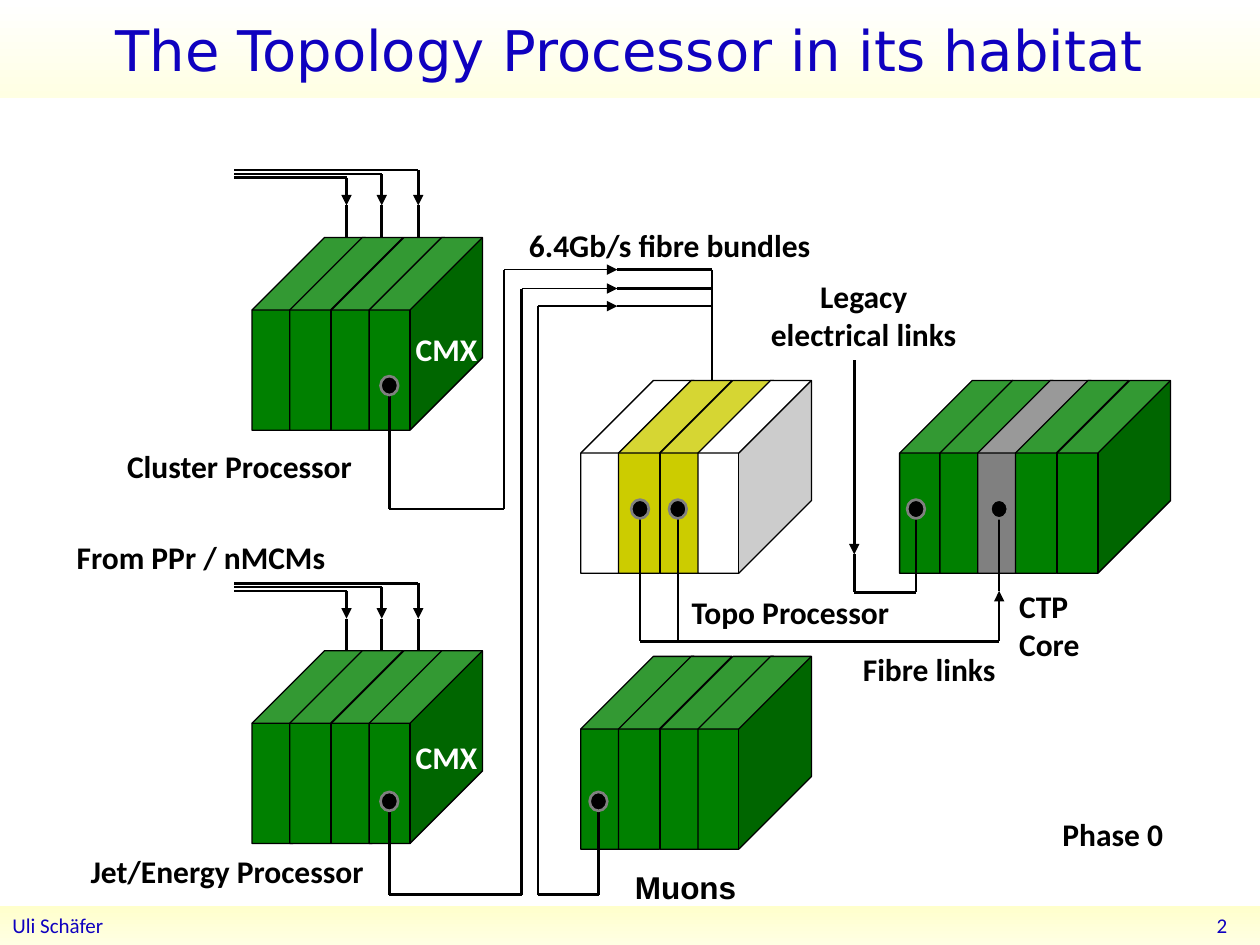
import itertools
from dataclasses import dataclass

import pptx
import pptx.dml.color
import pptx.enum.shapes
import pptx.enum.text
import pptx.oxml
import pptx.oxml.ns
import pptx.util
from lxml import etree

SHAPE = pptx.enum.shapes.MSO_SHAPE
ALIGN = pptx.enum.text.PP_ALIGN
ANCHOR = pptx.enum.text.MSO_ANCHOR
COLUMNS = 100
SLIDE_WIDTH = pptx.util.Inches(10)
SLIDE_HEIGHT = pptx.util.Inches(7.5)


@dataclass(frozen=True)
class Theme:
    ink: str = "000000"
    white: str = "FFFFFF"
    title: str = "0F01BF"
    green: str = "008000"
    yellow: str = "CCCC00"
    grey: str = "808080"
    band_light: str = "FFFFE3"
    band_deep: str = "FFFFCC"
    title_font: str = "DejaVu Sans"
    font: str = "Calibri"
    muon_font: str = "Arial"
    title_size: int = 32
    label_size: int = 18
    footer_size: int = 12
    wire: float = 1.5
    thin: float = 0.75


THEME = Theme()


def grid(*cells):
    return [round(SLIDE_WIDTH * n / COLUMNS) for n in cells]


def rgb(color):
    return pptx.dml.color.RGBColor.from_string(color)


def write(sp, lines, size, color, font=THEME.font, bold=False, align=ALIGN.LEFT,
          anchor=ANCHOR.MIDDLE):
    tf = sp.text_frame
    tf.auto_size = pptx.enum.text.MSO_AUTO_SIZE.NONE
    tf.vertical_anchor = anchor
    for i, line in enumerate(lines):
        p = tf.add_paragraph() if i else tf.paragraphs[0]
        p.alignment = align
        r = p.add_run()
        r.text = line
        r.font.size = pptx.util.Pt(size)
        r.font.name = font
        r.font.bold = bold
        r.font.color.rgb = rgb(color)
    return tf


def gradient(sp, first, last, angle):
    sp.fill.gradient()
    sp.fill.gradient_angle = angle
    for stop, color in zip(sp.fill.gradient_stops, (first, last)):
        stop.color.rgb = rgb(color)


def add_title(s, text):
    sp = s.shapes.title
    sp.left, sp.top, sp.width, sp.height = grid(0, 0, COLUMNS, 7.8)
    gradient(sp, THEME.band_light, THEME.white, 90)
    write(sp, [text], THEME.title_size, THEME.title, THEME.title_font, align=ALIGN.CENTER)


def add_footer(s, author, number):
    sp = s.shapes.add_shape(SHAPE.RECTANGLE, *grid(0, 71.9, COLUMNS, 3.1))
    sp.shadow.inherit = False
    sp.line.fill.background()
    gradient(sp, THEME.band_deep, THEME.band_light, 270)
    write(sp, [author], THEME.footer_size, THEME.title)
    sp = s.shapes.add_textbox(*grid(77.3, 71.8, 21.1, 3.2))
    tf = write(sp, [number], THEME.footer_size, THEME.title, align=ALIGN.RIGHT)
    tf.word_wrap = True


def add_label(s, box, lines, color=THEME.ink, font=THEME.font, align=ALIGN.LEFT):
    sp = s.shapes.add_textbox(*grid(*box))
    tf = write(sp, lines, THEME.label_size, color, font, True, align, ANCHOR.TOP)
    tf.word_wrap = False
    tf.margin_left, tf.margin_top, tf.margin_right, tf.margin_bottom = grid(1, 0.7, 1, 0.5)


def add_solid(shapes, kind, box, fill, line, width):
    sp = shapes.add_shape(kind, *grid(*box))
    sp.shadow.inherit = False
    sp.fill.solid()
    sp.fill.fore_color.rgb = rgb(fill)
    sp.line.color.rgb = rgb(line)
    sp.line.width = pptx.util.Pt(width)
    return sp


def add_crate(s, left, top, colors, offsets=(0, 3, 6.3, 9.3)):
    crate = s.shapes.add_group_shape()
    for offset, color in zip(offsets, colors):
        sp = add_solid(crate.shapes, SHAPE.CUBE, (left + offset, top, 9, 15.3),
                       color, THEME.ink, THEME.thin)
        sp.adjustments[0] = 0.64


def add_port(s, x, y):
    add_solid(s.shapes, SHAPE.OVAL, (x - 0.7, y - 0.75, 1.4, 1.5),
              THEME.ink, THEME.grey, THEME.wire)


def add_wire(s, points, arrow=None, arrow_width=THEME.wire):
    for i, (start, end) in enumerate(itertools.pairwise(points)):
        c = s.shapes.add_connector(pptx.enum.shapes.MSO_CONNECTOR.STRAIGHT,
                                   *grid(*start, *end))
        c.line.color.rgb = rgb(THEME.ink)
        c.line.width = pptx.util.Pt(arrow_width if i == arrow else THEME.wire)
        if i == arrow:
            etree.SubElement(c.line._get_or_add_ln(), pptx.oxml.ns.qn("a:tailEnd"),
                             type="triangle")
        etree.SubElement(c._element.spPr, pptx.oxml.ns.qn("a:effectLst"))


def add_inputs(s, top):
    for x, drop in ((27.5, 0.6), (30.3, 0.3), (33.2, 0)):
        y = top + drop
        add_wire(s, [(18.6, y), (x, y), (x, top + 2.8), (x, top + 7.2)], arrow=1)


def add_bundle(s, port, floor, riser, level, arrow_width):
    x, y = port
    add_wire(s, [(x, y), (x, floor), (riser, floor), (riser, level), (49, level),
                 (56.5, level)], 3, arrow_width)
    add_port(s, x, y)


def add_crates(s):
    green_crate = [THEME.green] * 4
    for top in (13.5, 46.3):
        add_inputs(s, top)
        add_crate(s, 20, top + 5.35, green_crate)
    add_crate(s, 46.1, 52.1, green_crate)
    add_wire(s, [(56.5, 21.4), (56.5, 31.6)])
    add_crate(s, 46.1, 30.2, [THEME.white, THEME.yellow, THEME.yellow, THEME.white])
    add_crate(s, 71.4, 30.2, [THEME.green, THEME.green, THEME.grey, THEME.green, THEME.green],
              (0, 3.2, 6.2, 9.2, 12.5))


def add_links(s):
    add_bundle(s, (30.9, 30.6), 40.4, 40, 21.4, THEME.thin)
    add_bundle(s, (30.9, 63.6), 71, 41.4, 22.9, THEME.thin)
    add_bundle(s, (47.5, 63.6), 71, 42.7, 24.3, THEME.wire)
    add_wire(s, [(50.8, 40.4), (50.8, 50.9), (79.3, 50.9), (79.3, 46.9), (79.3, 40.4)], 2)
    add_wire(s, [(53.8, 40.4), (53.8, 50.9)])
    add_wire(s, [(67.8, 28.6), (67.8, 44), (67.8, 47), (72.7, 47), (72.7, 40.4)], 0)
    for x in (50.8, 53.8, 72.7, 79.3):
        add_port(s, x, 40.4)


def add_labels(s):
    add_label(s, (53.9, 46.4, 14.2, 2.8), ["Topo Processor"])
    add_label(s, (49.4, 68.2, 10.1, 2.8), ["Muons"], font=THEME.muon_font)
    add_label(s, (59.5, 21.3, 18.1, 7.2), ["Legacy", "electrical links"], align=ALIGN.CENTER)
    add_label(s, (9.1, 34.8, 21.2, 5.6), ["Cluster Processor"])
    add_label(s, (6.2, 66.9, 21.1, 3.6), ["Jet/Energy Processor"])
    add_label(s, (5.1, 42, 22.1, 3.9), ["From PPr / nMCMs"])
    add_label(s, (41, 17.2, 21, 3.4), ["6.4Gb/s fibre bundles"])
    add_label(s, (67.5, 50.9, 13.6, 3.4), ["Fibre links"])
    add_label(s, (79.9, 45.9, 5.3, 4.8), ["CTP", "Core"])
    add_label(s, (72.1, 64, 21.2, 5.6), ["Phase 0"], align=ALIGN.RIGHT)
    for top in (25.5, 57.9):
        add_label(s, (32, top, 5.2, 2.7), ["CMX"], THEME.white)


def main():
    prs = pptx.Presentation()
    prs.slide_width, prs.slide_height = SLIDE_WIDTH, SLIDE_HEIGHT
    s = prs.slides.add_slide(prs.slide_layouts.get_by_name("Title Only"))
    add_title(s, "The Topology Processor in its habitat")
    add_footer(s, "Uli Schäfer", "2")
    add_crates(s)
    add_links(s)
    add_labels(s)
    prs.save("out.pptx")


if __name__ == "__main__":
    main()
